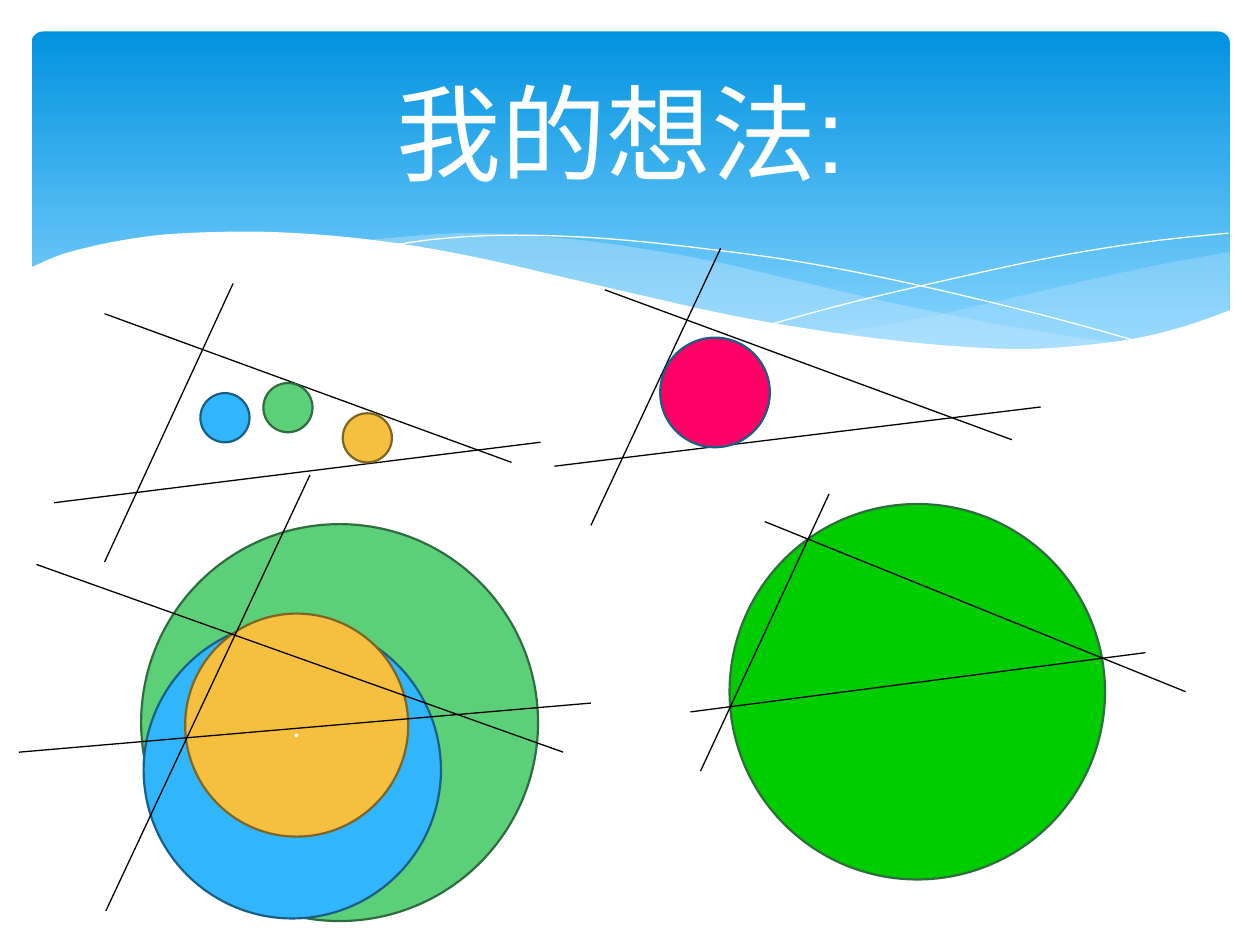
from pptx import Presentation
from pptx.dml.color import RGBColor
from pptx.enum.shapes import MSO_CONNECTOR as Link, MSO_SHAPE as Preset
from pptx.enum.text import MSO_ANCHOR as Anchor, PP_ALIGN as Align
from pptx.oxml.ns import qn
from pptx.util import Inches, Pt
from lxml.etree import SubElement

COLUMNS, ROWS = 100, 75
UNIT = Inches(10) // COLUMNS
STEPS = 6

WHITE = RGBColor(0xFF, 0xFF, 0xFF)
BLACK = RGBColor(0, 0, 0)
SKY_TOP = RGBColor(0x02, 0x93, 0xE0)
SKY_BOTTOM = RGBColor(0x83, 0xD3, 0xFE)
MIST = RGBColor(0xC6, 0xE7, 0xFC)
BLUE, BLUE_EDGE = RGBColor(0x31, 0xB6, 0xFD), RGBColor(0x19, 0x5F, 0x84)
MINT, GREEN_EDGE = RGBColor(0x5B, 0xD0, 0x78), RGBColor(0x2F, 0x6D, 0x3F)
GOLD, GOLD_EDGE = RGBColor(0xF5, 0xC0, 0x40), RGBColor(0x80, 0x64, 0x21)
GREEN = RGBColor(0, 0xCC, 0)
PINK = RGBColor(0xFF, 0, 0x66)

RIGHT_MIST = [(97.6, 20), (92.1, 21), (86.1, 22.3), (77.9, 24.2), (72.9, 25.3), (66.1, 26.5)]
RIGHT_MIST_BASE = [(66.1, 26.5), (71.9, 27.2), (76.9, 27.7), (81.4, 27.8), (86.3, 27.5),
                   (90.5, 26.9), (94.2, 25.9), (97.6, 24.7)]
LEFT_MIST = [(89.3, 27.3), (83.7, 26.5), (77.5, 25.4), (70.6, 24), (62.9, 22.2), (56.9, 20.8),
             (51.4, 19.8), (46.5, 19.1), (42, 18.7), (38, 18.5), (34.4, 18.6), (28.6, 19.1)]
LEFT_MIST_BASE = [(28.6, 19.1), (34.2, 19.9), (40.4, 21.1), (49.1, 23.2), (56.6, 24.8),
                  (63.4, 26.1), (69.5, 27), (74.8, 27.6), (79.6, 27.8), (84.8, 27.7), (89.3, 27.3)]
FALLING_THREAD = [(30.9, 19.5), (34.4, 19), (38.7, 18.7), (43.3, 18.7), (48.9, 19), (55.6, 19.7),
                  (63.6, 20.8), (72.7, 22.6), (83.1, 25.1), (90.7, 27.2)]
RISING_THREAD = [(61.3, 25.7), (67.2, 24.1), (74.8, 22.3), (83.6, 20.4), (91, 19.2), (97.5, 18.5)]
WAVE = [(97.7, 24.6), (94, 25.9), (89.9, 26.9), (85, 27.5), (80.9, 27.7), (76.1, 27.5),
        (70.8, 27), (64.8, 26.2), (57.9, 25), (50.3, 23.3), (44.7, 22), (39.1, 20.7),
        (34, 19.7), (29.2, 19), (25, 18.6), (21.1, 18.4), (17.7, 18.4), (13.2, 18.6),
        (9.5, 19.1), (6.7, 19.7), (4.6, 20.3), (2.3, 21.3)]

LINES_LOWER_RIGHT = [(60.7, 41.4, 94.1, 54.9), (54.8, 56.5, 90.9, 51.8), (55.6, 61.2, 65.8, 39.2)]
LINES_UPPER_LEFT = [(8.3, 24.9, 40.6, 36.7), (8.3, 44.6, 18.5, 22.5), (4.3, 39.9, 42.9, 35.1)]
LINES_UPPER_RIGHT = [(46.9, 41.7, 57.2, 19.7), (44, 37, 82.6, 32.3), (48, 23, 80.3, 34.9)]
LINES_LOWER_LEFT = [(2.9, 44.8, 44.7, 59.7), (1.5, 59.7, 46.9, 55.8), (8.4, 72.3, 24.6, 37.7)]


def grid(*cells):
    return [round(cell * UNIT) for cell in cells]


def smooth(knots):
    padded = [knots[0], *knots, knots[-1]]
    points = []
    for a, b, c, d in zip(padded, padded[1:], padded[2:], padded[3:]):
        for step in range(STEPS):
            t = step / STEPS
            points.append(tuple(
                q + t / 2 * (r - p + t * (2 * p - 5 * q + 4 * r - s + t * (3 * (q - r) + s - p)))
                for p, q, r, s in zip(a, b, c, d)))
    return points + [knots[-1]]


def add_outline(page, points, closed=True):
    (x, y), *rest = [grid(*point) for point in points]
    builder = page.shapes.build_freeform(x, y)
    builder.add_line_segments(rest, close=closed)
    shape = builder.convert_to_shape()
    shape.shadow.inherit = False
    return shape


def add_area(page, points, color, opacity=100):
    shape = add_outline(page, points)
    shape.line.fill.background()
    shape.fill.solid()
    shape.fill.fore_color.rgb = color
    if opacity < 100:
        tone = shape._element.spPr.find(qn("a:solidFill"))[0]
        SubElement(tone, qn("a:alpha")).set("val", str(opacity * 1000))


def add_thread(page, knots):
    shape = add_outline(page, smooth(knots), closed=False)
    shape.fill.background()
    shape.line.color.rgb = WHITE
    shape.line.width = Pt(0)


def add_sky(page):
    sky = page.shapes.add_shape(Preset.ROUNDED_RECTANGLE, *grid(2.5, 2.5, 95.1, 27))
    sky.adjustments[0] = 0.034
    sky.shadow.inherit = False
    sky.line.fill.background()
    sky.fill.gradient()
    sky.fill.gradient_angle = 270
    for stop, color, position in zip(sky.fill.gradient_stops, (SKY_TOP, SKY_BOTTOM), (0, 0.9)):
        stop.color.rgb = color
        stop.position = position


def add_circle(page, left, top, size, color, edge):
    circle = page.shapes.add_shape(Preset.OVAL, *grid(left, top, size, size))
    circle.shadow.inherit = False
    circle.fill.solid()
    circle.fill.fore_color.rgb = color
    circle.line.color.rgb = edge
    circle.line.width = Pt(1.25)
    return circle


def add_lines(page, lines):
    for ends in lines:
        line = page.shapes.add_connector(Link.STRAIGHT, *grid(*ends))
        line.line.color.rgb = BLACK
        line.line.width = Pt(0.75)
        SubElement(line._element.spPr, qn("a:effectLst"))


def write(box, text, size, font, color=WHITE):
    frame = box.text_frame
    frame.word_wrap = True
    frame.vertical_anchor = Anchor.MIDDLE
    para = frame.paragraphs[0]
    para.alignment = Align.CENTER
    span = para.add_run()
    span.text = text
    span.font.size = Pt(size)
    span.font.name = font
    span.font.color.rgb = color


def add_backdrop(page):
    add_sky(page)
    add_area(page, smooth(RIGHT_MIST) + smooth(RIGHT_MIST_BASE), MIST, opacity=29)
    add_area(page, smooth(LEFT_MIST) + smooth(LEFT_MIST_BASE), MIST, opacity=40)
    add_thread(page, FALLING_THREAD)
    add_thread(page, RISING_THREAD)
    add_area(page, smooth(WAVE) + [(2.3, 32.9), (97.7, 32.9)], WHITE)


def main():
    deck = Presentation()
    deck.slide_width, deck.slide_height = grid(COLUMNS, ROWS)
    page = deck.slides.add_slide(deck.slide_layouts[6])
    add_backdrop(page)

    add_circle(page, 57.9, 40, 29.8, GREEN, GREEN_EDGE)
    add_lines(page, LINES_LOWER_RIGHT)

    add_circle(page, 11.2, 41.6, 31.5, MINT, GREEN_EDGE)
    title = page.shapes.add_textbox(*grid(4.3, 3.6, 90, 13.7))
    write(title, "我的想法:", size=60, font="Arial")
    add_circle(page, 11.4, 49.3, 23.6, BLUE, BLUE_EDGE)

    add_lines(page, LINES_UPPER_LEFT)
    add_circle(page, 27.2, 32.8, 3.9, GOLD, GOLD_EDGE)
    add_circle(page, 20.9, 30.4, 3.9, MINT, GREEN_EDGE)
    add_circle(page, 15.9, 31.2, 3.9, BLUE, BLUE_EDGE)

    add_lines(page, LINES_UPPER_RIGHT)
    add_circle(page, 52.4, 26.8, 8.7, PINK, BLUE_EDGE)

    center = add_circle(page, 14.7, 48.7, 17.7, GOLD, GOLD_EDGE)
    write(center, ".", size=18, font="Calibri")
    add_lines(page, LINES_LOWER_LEFT)

    deck.save("out.pptx")


if __name__ == "__main__":
    main()
